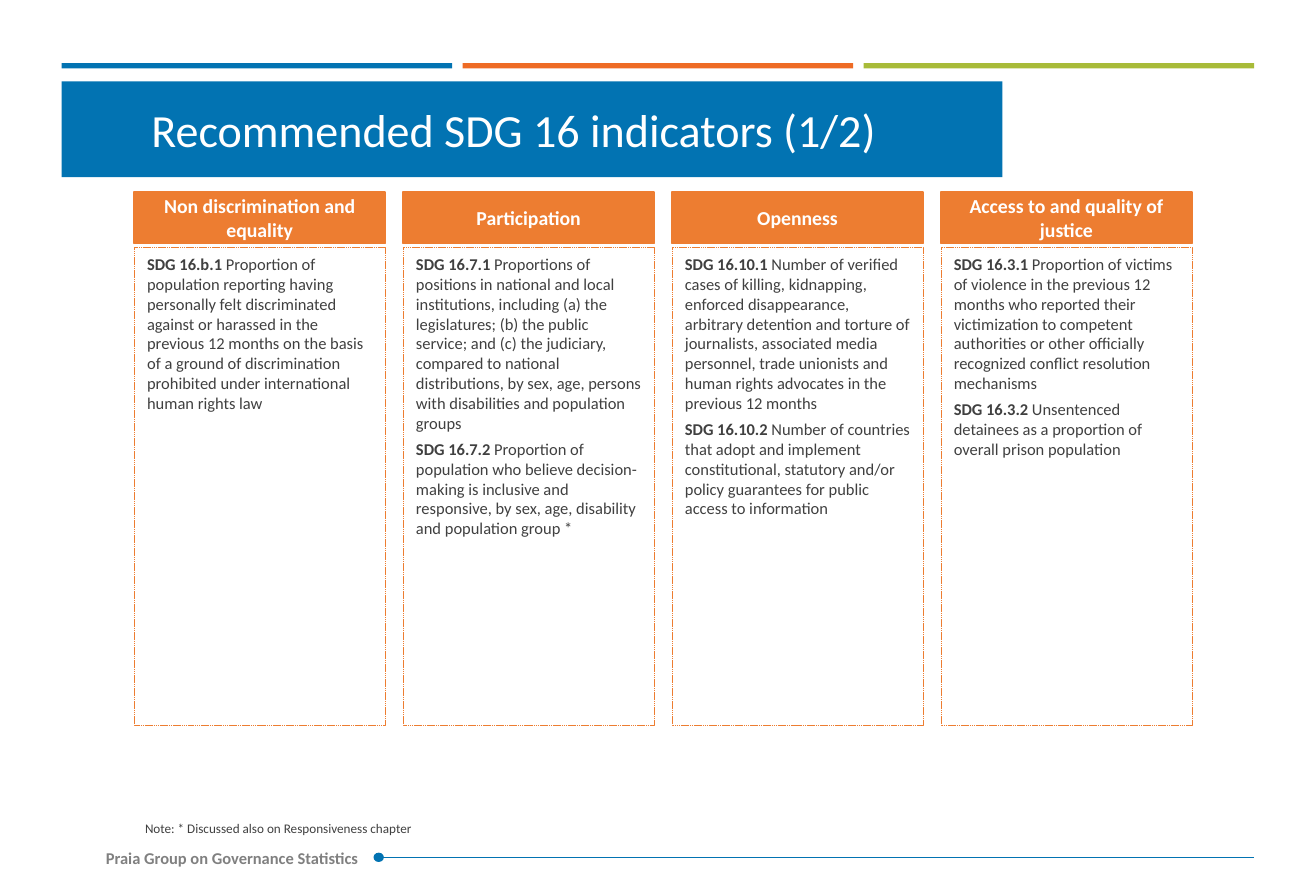
import pptx
import pptx.dml.color
import pptx.enum.dml
import pptx.enum.shapes
import pptx.enum.text
import pptx.oxml.ns
import pptx.util
from lxml import etree

Cm = pptx.util.Cm
Pt = pptx.util.Pt
RGBColor = pptx.dml.color.RGBColor
Shape = pptx.enum.shapes.MSO_SHAPE
Align = pptx.enum.text.PP_ALIGN
Anchor = pptx.enum.text.MSO_ANCHOR

BLUE = RGBColor(0x02, 0x73, 0xB2)
BAR_ORANGE = RGBColor(0xEE, 0x6B, 0x25)
GREEN = RGBColor(0xA8, 0xBB, 0x39)
ORANGE = RGBColor(0xED, 0x7D, 0x31)
GREY = RGBColor(0x80, 0x80, 0x80)
DARK = RGBColor(0x40, 0x40, 0x40)
WHITE = RGBColor(0xFF, 0xFF, 0xFF)

# Each column: heading, then (indicator code, description) pairs
COLUMNS = [
    ("Non discrimination and equality", [
        ("SDG 16.b.1", "Proportion of population reporting having personally felt "
         "discriminated against or harassed in the previous 12 months on the basis of "
         "a ground of discrimination prohibited under international human rights law"),
    ]),
    ("Participation", [
        ("SDG 16.7.1", "Proportions of positions in national and local institutions, "
         "including (a) the legislatures; (b) the public service; and (c) the judiciary, "
         "compared to national distributions, by sex, age, persons with disabilities "
         "and population groups"),
        ("SDG 16.7.2", "Proportion of population who believe decision-making is inclusive "
         "and responsive, by sex, age, disability and population group *"),
    ]),
    ("Openness", [
        ("SDG 16.10.1", "Number of verified cases of killing, kidnapping, enforced "
         "disappearance, arbitrary detention and torture of journalists, associated media "
         "personnel, trade unionists and human rights advocates in the previous 12 months"),
        ("SDG 16.10.2", "Number of countries that adopt and implement constitutional, "
         "statutory and/or policy guarantees for public access to information"),
    ]),
    ("Access to and quality of justice", [
        ("SDG 16.3.1", "Proportion of victims of violence in the previous 12 months who "
         "reported their victimization to competent authorities or other officially "
         "recognized conflict resolution mechanisms"),
        ("SDG 16.3.2", "Unsentenced detainees as a proportion of overall prison population"),
    ]),
]


def format_run(run, size, color, bold=False):
    run.font.name = "Calibri"
    run.font.size = Pt(size)
    run.font.color.rgb = color
    run.font.bold = bold


def add_block(slide, left, top, width, height, fill=None, kind=Shape.RECTANGLE):
    shape = slide.shapes.add_shape(kind, Cm(left), Cm(top), Cm(width), Cm(height))
    shape.shadow.inherit = False
    if fill is None:
        shape.fill.background()
    else:
        shape.fill.solid()
        shape.fill.fore_color.rgb = fill
    shape.line.fill.background()
    return shape


def set_text(shape, text, size, color, bold=False, align=Align.LEFT, anchor=Anchor.TOP):
    frame = shape.text_frame
    frame.word_wrap = True
    frame.auto_size = pptx.enum.text.MSO_AUTO_SIZE.NONE
    frame.vertical_anchor = anchor
    frame.text = text
    paragraph = frame.paragraphs[0]
    paragraph.alignment = align
    format_run(paragraph.runs[0], size, color, bold)
    return paragraph


def add_label(slide, left, top, width, height, *text, **style):
    box = slide.shapes.add_textbox(Cm(left), Cm(top), Cm(width), Cm(height))
    set_text(box, *text, **style)


def add_header(slide, left, top, width):
    # Three colour bars across the width
    gap = 0.2
    bar_width = (width - 2 * gap) / 3
    for index, color in enumerate((BLUE, BAR_ORANGE, GREEN)):
        add_block(slide, left + index * (bar_width + gap), top, bar_width, 0.1, color)

    # Banner with the title on it
    add_block(slide, left, top + 0.35, 18.16, 1.85, BLUE)
    title = slide.shapes.title
    title.left, title.top = Cm(left + 1.48), Cm(top + 0.74)
    title.width, title.height = Cm(15.93), Cm(1.42)
    paragraph = set_text(title, "Recommended SDG 16 indicators (1/2)", 25.2, WHITE)
    paragraph.line_spacing = 0.9
    # Draw the title above the banner
    slide.shapes[-1].element.addnext(title.element)


def add_column(slide, left, top, width, height, heading, indicators):
    # Heading
    header = add_block(slide, left, top, width, 0.99, ORANGE)
    header.line.color.rgb = ORANGE
    header.line.width = Pt(1)
    set_text(header, heading, 10.8, WHITE, True, Align.CENTER, Anchor.MIDDLE)

    # Dotted box listing the indicators
    body_top = 1.07
    body = add_block(slide, left, top + body_top, width, height - body_top)
    body.line.color.rgb = ORANGE
    body.line.width = Pt(0.25)
    body.line.dash_style = pptx.enum.dml.MSO_LINE.SQUARE_DOT
    frame = body.text_frame
    frame.word_wrap = True
    frame.vertical_anchor = Anchor.TOP
    for index, (code, description) in enumerate(indicators):
        paragraph = frame.add_paragraph() if index else frame.paragraphs[0]
        paragraph.alignment = Align.LEFT
        paragraph.space_after = Pt(3.6)
        for text, bold in ((code, True), (" " + description, False)):
            run = paragraph.add_run()
            run.text = text
            format_run(run, 9, DARK, bold)


def add_columns(slide, left, top, width, height):
    gap = 0.34
    column_width = (width - gap * (len(COLUMNS) - 1)) / len(COLUMNS)
    for index, (heading, indicators) in enumerate(COLUMNS):
        add_column(slide, left + index * (column_width + gap), top, column_width, height,
                   heading, indicators)


def add_footer(slide, left, top, width):
    add_label(slide, left, top, 6.25, 0.64, "Praia Group on Governance Statistics",
              9, GREY, bold=True, align=Align.RIGHT)

    # Rule starting at a dot
    start, middle = left + 6.4, top + 0.31
    rule = slide.shapes.add_connector(
        pptx.enum.shapes.MSO_CONNECTOR.STRAIGHT,
        Cm(start), Cm(middle), Cm(left + width), Cm(middle))
    rule.line.color.rgb = BLUE
    rule.line.width = Pt(0.5)
    etree.SubElement(rule.element.spPr, pptx.oxml.ns.qn("a:effectLst"))
    add_block(slide, start - 0.1, middle - 0.09, 0.2, 0.18, BLUE, Shape.OVAL)


def main():
    presentation = pptx.Presentation()
    presentation.slide_width = Cm(25.4)
    presentation.slide_height = Cm(17.15)
    slide = presentation.slides.add_slide(presentation.slide_layouts[5])

    add_header(slide, 1.19, 1.22, 23.02)
    add_columns(slide, 2.59, 3.71, 20.42, 10.29)
    add_label(slide, 2.55, 15.65, 20.47, 0.64,
              "Note: * Discussed also on Responsiveness chapter", 7.2, DARK,
              align=Align.JUSTIFY, anchor=Anchor.MIDDLE)
    add_footer(slide, 0.91, 16.23, 23.3)

    presentation.save("out.pptx")


if __name__ == "__main__":
    main()
